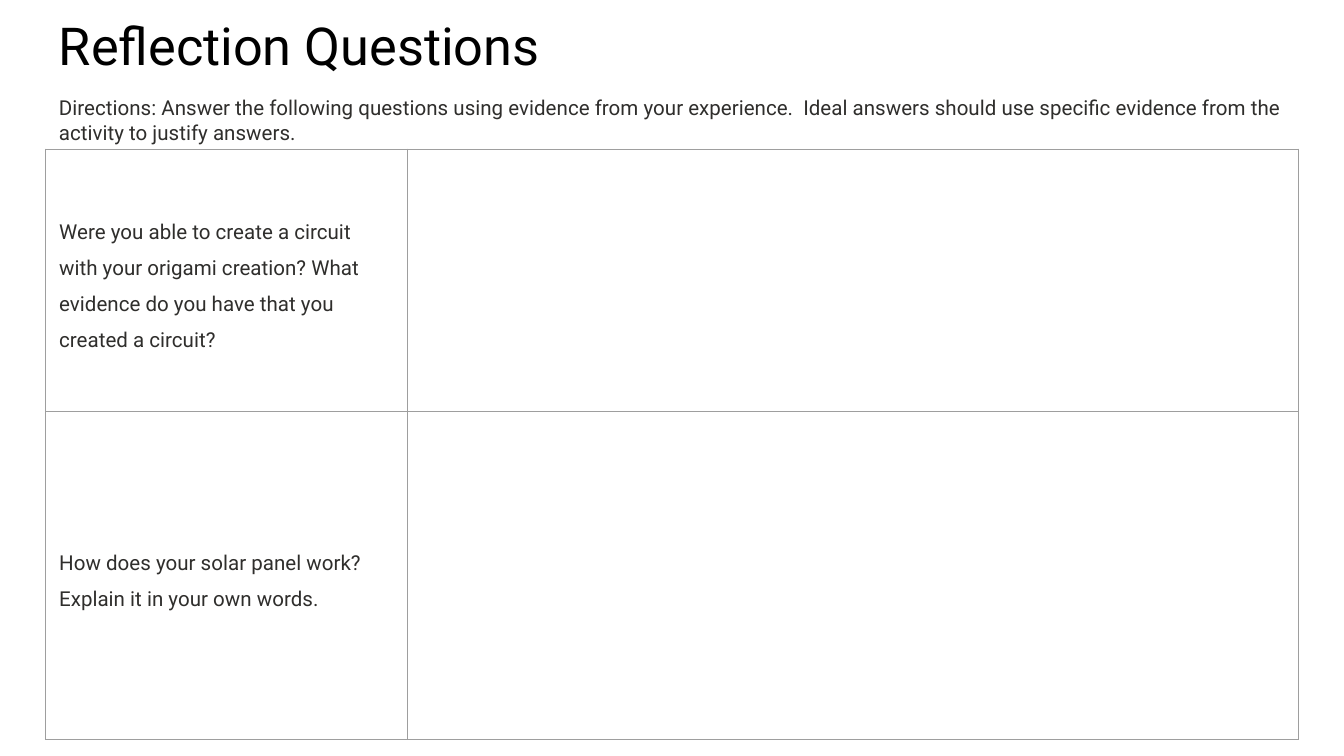
from lxml import etree
from pptx import Presentation
from pptx.dml.color import RGBColor
from pptx.enum.text import MSO_ANCHOR
from pptx.oxml.ns import qn
from pptx.util import Inches, Pt

MIDDLE, TOP = MSO_ANCHOR.MIDDLE, MSO_ANCHOR.TOP

TITLE = "Reflection Questions"
DIRECTIONS = (
    "Directions: Answer the following questions using evidence from your experience.  "
    "Ideal answers should use specific evidence from the activity to justify answers."
)
# Question and row height in inches
QUESTIONS = [
    ("Were you able to create a circuit with your origami creation? "
     "What evidence do you have that you created a circuit?", 1.95),
    ("How does your solar panel work? Explain it in your own words.", 2.44),
]

THEME = {
    "font": "Roboto",
    "title_color": "000000",
    "body_color": "2F2E2C",
    "border_color": "9E9E9E",
    "title_size": 28,
    "body_size": 11,
    "border_width": 0.75,
}
SLIDE_WIDTH = Inches(10)
SLIDE_HEIGHT = SLIDE_WIDTH * 9 // 16
LEFT = 0.34
COLUMN_WIDTHS = [2.69, 6.63]
WIDTH = sum(COLUMN_WIDTHS)
TABLE_TOP = 1.11
PADDING = Inches(0.1)


def write_text(frame, text, size=THEME["body_size"], color=THEME["body_color"], spacing=1.0):
    paragraph = frame.paragraphs[0]
    paragraph.line_spacing = spacing
    run = paragraph.add_run()
    run.text = text
    run.font.name = THEME["font"]
    run.font.size = Pt(size)
    run.font.color.rgb = RGBColor.from_string(color)


def set_padding(holder):
    holder.margin_left = holder.margin_right = PADDING
    holder.margin_top = holder.margin_bottom = PADDING


def add_text_box(slide, text, top, height, **text_format):
    shape = slide.shapes.add_textbox(Inches(LEFT), Inches(top), Inches(WIDTH), Inches(height))
    frame = shape.text_frame
    frame.word_wrap = True
    frame.vertical_anchor = TOP
    set_padding(frame)
    write_text(frame, text, **text_format)


def set_borders(cell):
    """Draw all four sides; borders must precede the fill in the cell properties."""
    properties = cell._tc.get_or_add_tcPr()
    for position, side in enumerate(("a:lnL", "a:lnR", "a:lnT", "a:lnB")):
        line = etree.Element(qn(side), w=str(Pt(THEME["border_width"])))
        fill = etree.SubElement(line, qn("a:solidFill"))
        etree.SubElement(fill, qn("a:srgbClr"), val=THEME["border_color"])
        properties.insert(position, line)


def add_question_table(slide):
    height = sum(row_height for _, row_height in QUESTIONS)
    table = slide.shapes.add_table(
        len(QUESTIONS), len(COLUMN_WIDTHS),
        Inches(LEFT), Inches(TABLE_TOP), Inches(WIDTH), Inches(height),
    ).table
    table.first_row = table.horz_banding = False
    for column, width in zip(table.columns, COLUMN_WIDTHS):
        column.width = Inches(width)
    for row, (question, row_height) in zip(table.rows, QUESTIONS):
        row.height = Inches(row_height)
        for cell in row.cells:
            cell.fill.background()
            cell.vertical_anchor = MIDDLE
            set_padding(cell)
            set_borders(cell)
        write_text(row.cells[0].text_frame, question, spacing=1.5)


def main():
    presentation = Presentation()
    presentation.slide_width = SLIDE_WIDTH
    presentation.slide_height = SLIDE_HEIGHT
    slide = presentation.slides.add_slide(presentation.slide_layouts[6])
    add_text_box(slide, TITLE, 0, 0.63, size=THEME["title_size"], color=THEME["title_color"])
    add_question_table(slide)
    add_text_box(slide, DIRECTIONS, 0.61, 0.5)
    presentation.save("out.pptx")


if __name__ == "__main__":
    main()
